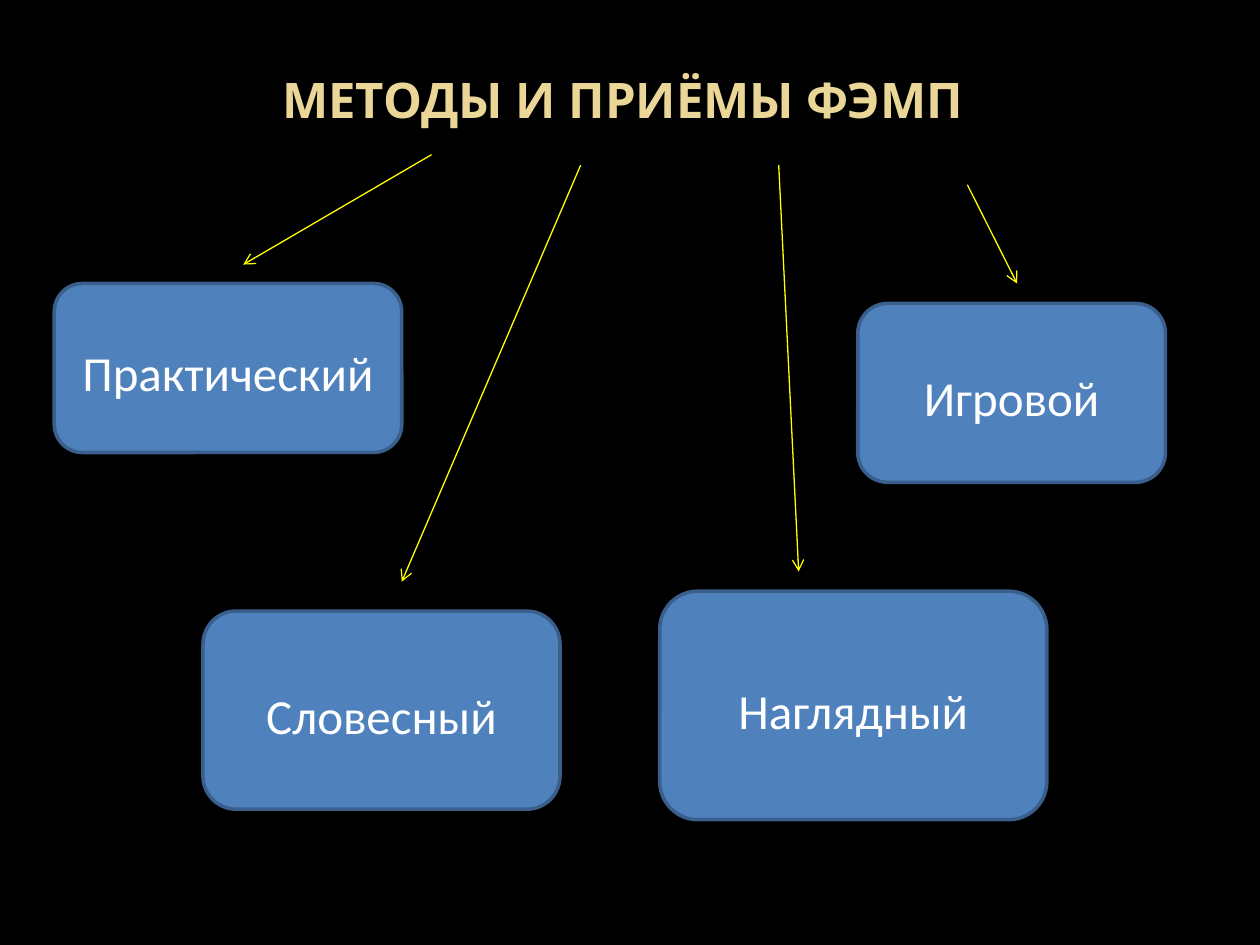
"""Build a slide that links a title to four teaching methods with arrows."""
from dataclasses import dataclass

from lxml.etree import SubElement
from pptx import Presentation
from pptx.dml.color import RGBColor
from pptx.enum.shapes import MSO_CONNECTOR as Connector, MSO_SHAPE as Shape
from pptx.enum.text import MSO_ANCHOR as Anchor, MSO_AUTO_SIZE as AutoSize, PP_ALIGN as Align
from pptx.oxml.ns import qn
from pptx.util import Pt


@dataclass(frozen=True)
class Theme:
    background: RGBColor = RGBColor.from_string("000000")
    title: RGBColor = RGBColor.from_string("EAD696")
    box: RGBColor = RGBColor.from_string("4F81BD")
    border: RGBColor = RGBColor.from_string("3A5F8C")
    label: RGBColor = RGBColor.from_string("FFFFFF")
    arrow: RGBColor = RGBColor.from_string("FFFF00")
    title_font: str = "Noto Sans"
    label_font: str = "Calibri"
    text_size: int = 28


theme = Theme()


def format_text(paragraph, font_name, color, bold=False):
    paragraph.alignment = Align.CENTER
    for run in paragraph.runs:
        run.font.name = font_name
        run.font.size = Pt(theme.text_size)
        run.font.bold = bold
        run.font.color.rgb = color


presentation = Presentation()
presentation.slide_width, presentation.slide_height = Pt(720), Pt(540)
slide = presentation.slides.add_slide(presentation.slide_layouts[0])
slide.background.fill.solid()
slide.background.fill.fore_color.rgb = theme.background
subtitle = slide.placeholders[1].element
subtitle.getparent().remove(subtitle)

title = slide.shapes.title
title.left, title.top, title.width, title.height = Pt(0), Pt(26), Pt(711.4), Pt(47.5)
frame = title.text_frame
frame.text = "МЕТОДЫ И ПРИЁМЫ ФЭМП"
frame.auto_size = AutoSize.NONE
frame.vertical_anchor = Anchor.BOTTOM
frame.margin_left = frame.margin_right = Pt(3.6)
frame.margin_top = frame.margin_bottom = Pt(0)
format_text(frame.paragraphs[0], theme.title_font, theme.title, bold=True)

methods = [
    ("Практический", (31, 162, 198.6, 96.6)),
    ("Игровой", (490.2, 173.4, 175.8, 102.2)),
    ("Словесный", (116, 349.2, 204, 113.2)),
    ("Наглядный", (377, 337.8, 221.2, 130.6)),
]
for name, bounds in methods:
    box = slide.shapes.add_shape(Shape.ROUNDED_RECTANGLE, *map(Pt, bounds))
    box.shadow.inherit = False
    box.fill.solid()
    box.fill.fore_color.rgb = theme.box
    box.line.color.rgb = theme.border
    box.line.width = Pt(2)
    frame = box.text_frame
    frame.text = name
    frame.word_wrap = True
    frame.vertical_anchor = Anchor.MIDDLE
    paragraph = frame.paragraphs[0]
    paragraph.line_spacing = 1.15
    paragraph.space_after = Pt(10)
    format_text(paragraph, theme.label_font, theme.label)

arrows = [
    (246.6, 88.4, 139, 151.2),
    (552.8, 105.6, 581.2, 162),
    (331.8, 94.4, 229.6, 332.4),
    (445, 94.4, 456.4, 326.6),
]
for ends in arrows:
    arrow = slide.shapes.add_connector(Connector.STRAIGHT, *map(Pt, ends))
    arrow.line.color.rgb = theme.arrow
    arrow.line.width = Pt(0.75)
    SubElement(arrow.line._get_or_add_ln(), qn("a:tailEnd"), type="arrow")
    SubElement(arrow.element.spPr, qn("a:effectLst"))

presentation.save("out.pptx")
